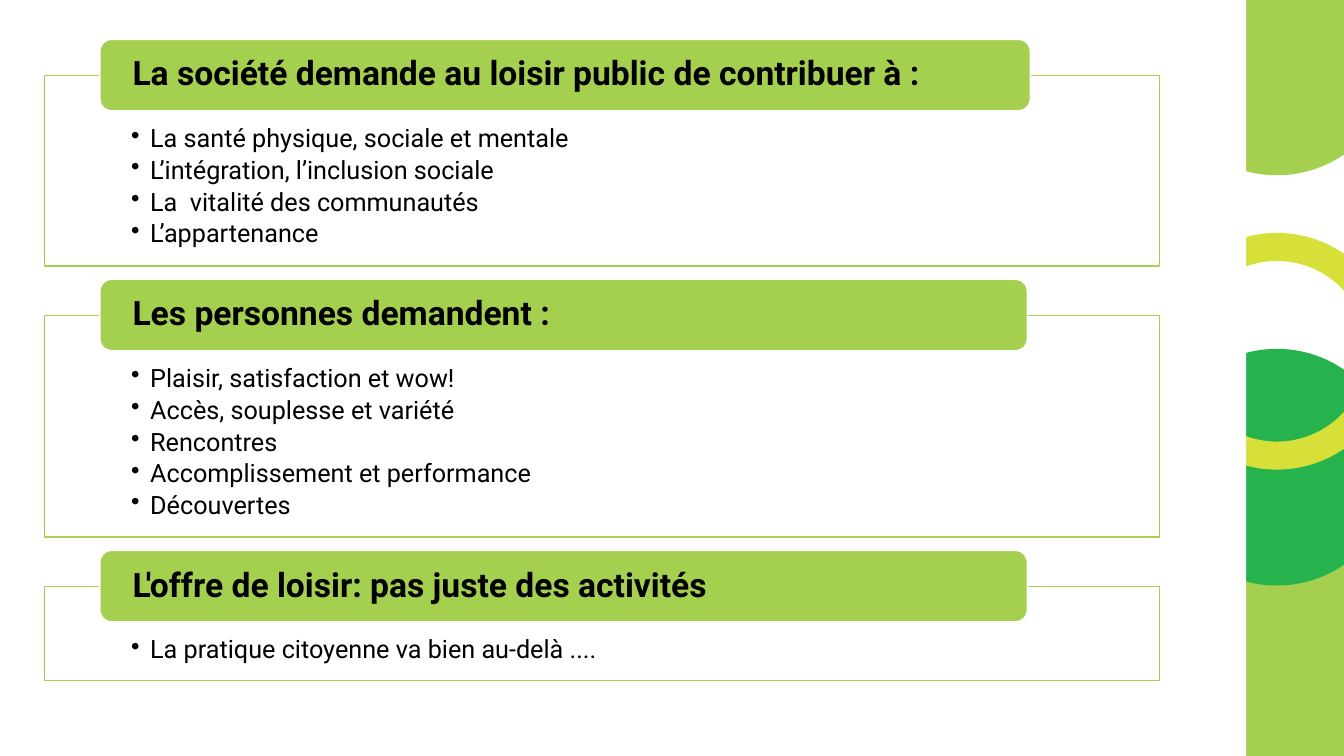
from dataclasses import dataclass

from lxml import etree
from pptx import Presentation
from pptx.dml.color import RGBColor
from pptx.enum.shapes import MSO_SHAPE
from pptx.enum.text import MSO_ANCHOR, PP_ALIGN
from pptx.oxml.ns import qn
from pptx.util import Emu, Pt

EMU_PER_PX = 9144  # 100 px to the inch
SLIDE_WIDTH, SLIDE_HEIGHT = 1333, 750

LIME = RGBColor(0xA5, 0xCF, 0x4F)
GREEN = RGBColor(0x26, 0xB3, 0x4D)
YELLOW = RGBColor(0xD7, 0xE0, 0x39)
WHITE = RGBColor(0xFF, 0xFF, 0xFF)
BLACK = RGBColor(0x00, 0x00, 0x00)

RECTANGLE, ROUNDED, OVAL = MSO_SHAPE.RECTANGLE, MSO_SHAPE.ROUNDED_RECTANGLE, MSO_SHAPE.OVAL
TOP, MIDDLE, LEFT = MSO_ANCHOR.TOP, MSO_ANCHOR.MIDDLE, PP_ALIGN.LEFT

PANEL_LEFT, PANEL_WIDTH, FIRST_PANEL_TOP, PANEL_GAP = 44, 1106, 75, 49
HEADING_LEFT, HEADING_HEIGHT, HEADING_RISE = 99, 71, 36
BULLET_INDENT = 19
SIDEBAR_LEFT, MASK_WIDTH = 1236, 97
CIRCLE_LEFT, CIRCLE_SIZE, CIRCLE_LINE = 1163, 207, 20
LOWER_BAR_TOP = 555

HEADING_FORMAT = {"name": "Roboto", "size": Pt(24), "bold": True}
BULLET_FORMAT = {"name": "Roboto", "size": Pt(18), "bold": False}


@dataclass(frozen=True)
class Section:
    heading: str
    heading_width: int
    height: int
    bullets: tuple[str, ...]


@dataclass(frozen=True)
class Circle:
    top: int
    color: RGBColor
    filled: bool


SECTIONS = (
    Section("La société demande au loisir public de contribuer à :", 923, 189, (
        "La santé physique, sociale et mentale",
        "L’intégration, l’inclusion sociale",
        "La  vitalité des communautés",
        "L’appartenance",
    )),
    Section("Les personnes demandent :", 920, 220, (
        "Plaisir, satisfaction et wow!",
        "Accès, souplesse et variété",
        "Rencontres",
        "Accomplissement et performance",
        "Découvertes",
    )),
    Section("L'offre de loisir: pas juste des activités", 920, 93, (
        "La pratique citoyenne va bien au-delà ....",
    )),
)
CIRCLES = (
    Circle(-47, LIME, True),
    Circle(360, GREEN, True),
    Circle(245, YELLOW, False),
)


def px(value: int) -> Emu:
    return Emu(value * EMU_PER_PX)


def add_box(slide, kind, bounds: tuple[int, int, int, int], fill: RGBColor | None,
            line: RGBColor | None = None, line_width: float = 1.1):
    """Add a shadowless shape; None leaves its fill or line out."""
    box = slide.shapes.add_shape(kind, *map(px, bounds))
    box.shadow.inherit = False
    if fill is None:
        box.fill.background()
    else:
        box.fill.solid()
        box.fill.fore_color.rgb = fill
    if line is None:
        box.line.fill.background()
    else:
        box.line.color.rgb = line
        box.line.width = Pt(line_width)
    return box


def write_text(box, lines: tuple[str, ...], font_format: dict, anchor,
               margins: tuple[int, int, int, int], bulleted: bool) -> None:
    frame = box.text_frame
    frame.word_wrap = True
    frame.vertical_anchor = anchor
    for side, margin in zip(("left", "top", "right", "bottom"), margins):
        setattr(frame, f"margin_{side}", px(margin))
    for index, line in enumerate(lines):
        para = frame.add_paragraph() if index else frame.paragraphs[0]
        para.alignment = LEFT
        para.line_spacing = 0.9
        if bulleted:
            para.space_after = Pt(3.2)
            add_bullet(para)
        span = para.add_run()
        span.text = line
        for name, value in font_format.items():
            setattr(span.font, name, value)
        span.font.color.rgb = BLACK


def add_bullet(para) -> None:
    properties = para._p.get_or_add_pPr()
    properties.set("marL", str(px(BULLET_INDENT)))
    properties.set("indent", str(-px(BULLET_INDENT)))
    etree.SubElement(properties, qn("a:buChar")).set("char", "•")


def draw_sidebar(slide) -> None:
    """Draw the circles, then hide their left part behind a white strip."""
    add_box(slide, RECTANGLE, (SIDEBAR_LEFT, LOWER_BAR_TOP, SLIDE_WIDTH - SIDEBAR_LEFT,
                               SLIDE_HEIGHT - LOWER_BAR_TOP), LIME)
    for circle in CIRCLES:
        add_box(slide, OVAL, (CIRCLE_LEFT, circle.top, CIRCLE_SIZE, CIRCLE_SIZE),
                circle.color if circle.filled else None, circle.color, CIRCLE_LINE)
    add_box(slide, RECTANGLE, (SIDEBAR_LEFT - MASK_WIDTH, 0, MASK_WIDTH, SLIDE_HEIGHT), WHITE)


def draw_section(slide, section: Section, top: int) -> None:
    panel = add_box(slide, RECTANGLE, (PANEL_LEFT, top, PANEL_WIDTH, section.height), WHITE, LIME)
    write_text(panel, section.bullets, BULLET_FORMAT, TOP, (86, 50, 86, 14), True)
    heading = add_box(slide, ROUNDED, (HEADING_LEFT, top - HEADING_RISE, section.heading_width,
                                       HEADING_HEIGHT), LIME, WHITE)
    write_text(heading, (section.heading,), HEADING_FORMAT, MIDDLE, (29, 0, 29, 0), False)


def main() -> None:
    deck = Presentation()
    deck.slide_width, deck.slide_height = px(SLIDE_WIDTH), px(SLIDE_HEIGHT)
    slide = deck.slides.add_slide(deck.slide_layouts.get_by_name("Blank"))
    draw_sidebar(slide)
    top = FIRST_PANEL_TOP
    for section in SECTIONS:
        draw_section(slide, section, top)
        top += section.height + PANEL_GAP
    deck.save("out.pptx")


if __name__ == "__main__":
    main()
